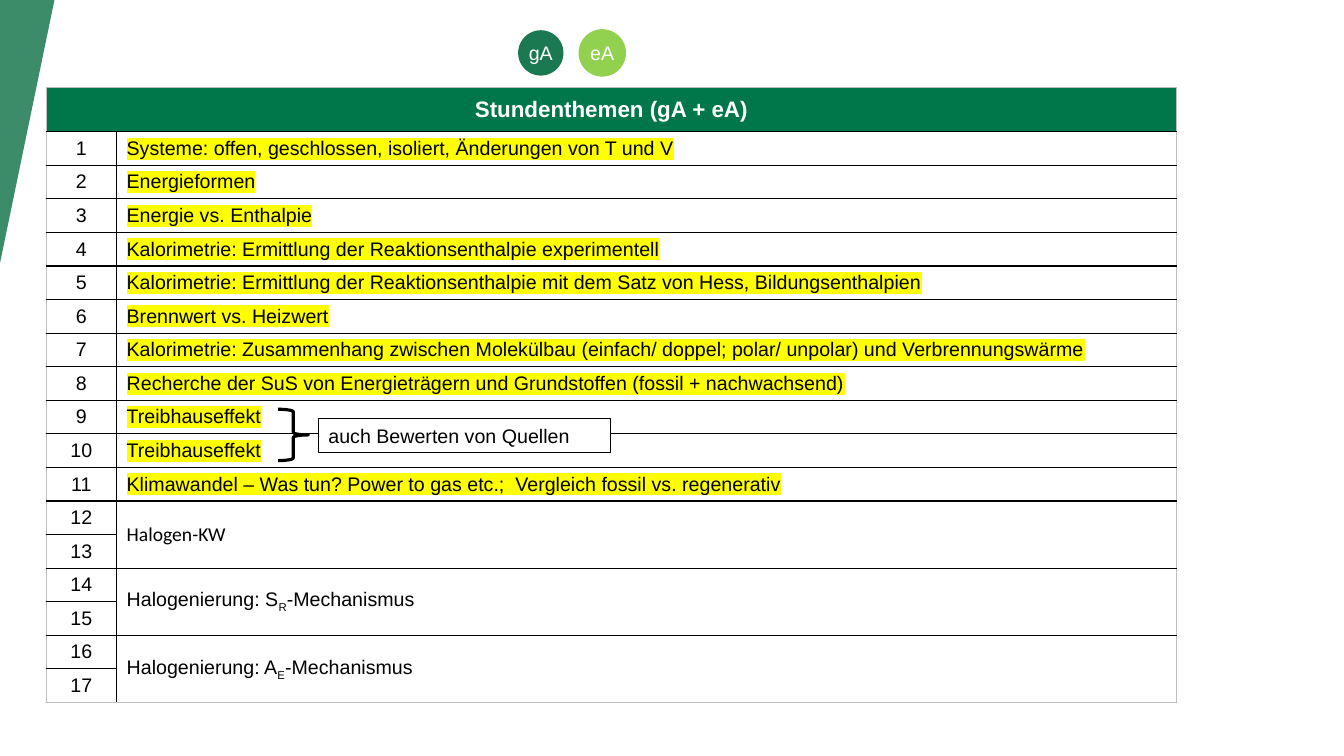
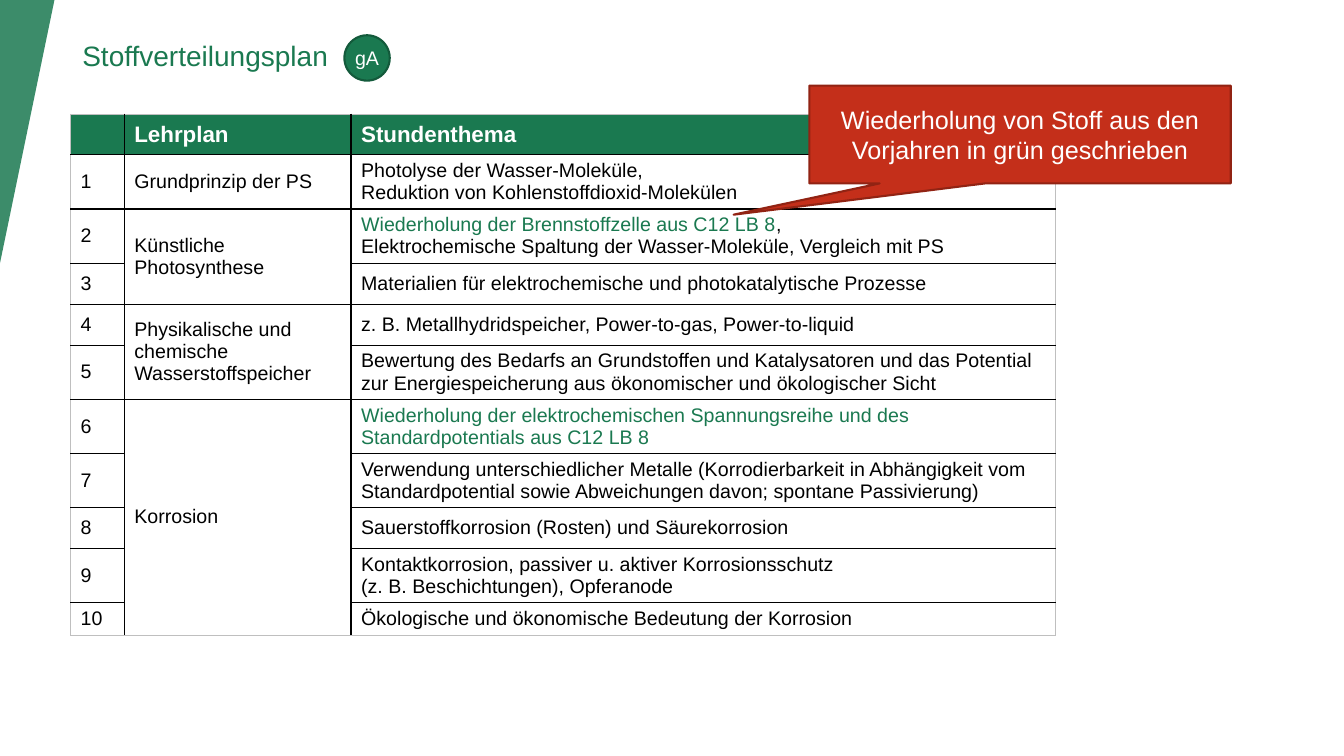
from lxml.etree import SubElement
from pptx import Presentation
from pptx.dml.color import RGBColor as RGB
from pptx.enum.shapes import MSO_SHAPE as SHAPE
from pptx.enum.text import MSO_ANCHOR as ANCHOR, PP_ALIGN as ALIGN
from pptx.oxml import parse_xml
from pptx.oxml.ns import nsdecls, qn
from pptx.util import Inches, Pt

GREEN = RGB(0x1A, 0x79, 0x50)
DEEP = RGB(0x00, 0x76, 0x4B)
DARK = RGB(0x13, 0x5A, 0x3B)
LIME = RGB(0x92, 0xD0, 0x50)
RED = RGB(0xC4, 0x2F, 0x1A)
MAROON = RGB(0x91, 0x23, 0x13)
BLACK = RGB(0, 0, 0)
WHITE = RGB(0xFF, 0xFF, 0xFF)
GREY = RGB(0xBF, 0xBF, 0xBF)
YELLOW = RGB(0xFF, 0xFF, 0x00)

UNIT = Inches(1) / 6  # the slide is a grid of 80 columns and 45 rows


def write(par, text, size=14, color=BLACK, bold=False, font="Arial", mark=None, base=0):
    """Add one run; mark is its highlight colour, base its baseline shift in percent."""
    run = par.add_run()
    run.text = text
    run.font.size, run.font.bold, run.font.name = Pt(size), bold, font
    run.font.color.rgb = color
    props = run._r.get_or_add_rPr()
    if base:
        props.set("baseline", str(base * 1000))
    if mark:
        props.find(qn("a:solidFill")).addnext(parse_xml(
            f'<a:highlight {nsdecls("a")}><a:srgbClr val="{mark}"/></a:highlight>'))


def draw(slide, kind, box, fill=None, line=None, width=1.5):
    """Add a preset shape; box is left, top, width, height in grid units."""
    shape = slide.shapes.add_shape(kind, *(round(v * UNIT) for v in box))
    shape.shadow.inherit = False
    if fill is None:
        shape.fill.background()
    else:
        shape.fill.solid()
        shape.fill.fore_color.rgb = fill
    if line is None:
        shape.line.fill.background()
    else:
        shape.line.color.rgb = line
        shape.line.width = Pt(width)
    return shape


prs = Presentation()
prs.slide_width, prs.slide_height = round(80 * UNIT), round(45 * UNIT)
first = prs.slides.add_slide(prs.slide_layouts[6])
second = prs.slides.add_slide(prs.slide_layouts[5])

# Corner wedge, shared through the master
wedge = draw(first, SHAPE.ISOSCELES_TRIANGLE, (0, 0, 3.24, 15.66), GREEN)
wedge.adjustments[0] = 1
wedge.rotation = 180
tint = wedge.element.spPr.find(qn("a:solidFill"))[0]
SubElement(tint, qn("a:alpha"), val="85000")
prs.slide_master.element.cSld.spTree.insert(2, wedge.element)

title = second.shapes.title
title.left, title.top, title.width, title.height = (
    round(v * UNIT) for v in (4.3, 1.95, 56.4, 2.7))
title.text_frame.vertical_anchor = ANCHOR.MIDDLE
head = title.text_frame.paragraphs[0]
head.alignment = ALIGN.LEFT
write(head, "Stoffverteilungsplan", 20, GREEN)

# Table contents: a cell is a string or a list of paragraphs, each a list of runs
topics = [
    "Systeme: offen, geschlossen, isoliert, Änderungen von T und V",
    "Energieformen",
    "Energie vs. Enthalpie",
    "Kalorimetrie: Ermittlung der Reaktionsenthalpie experimentell",
    "Kalorimetrie: Ermittlung der Reaktionsenthalpie mit dem Satz von Hess, Bildungsenthalpien",
    "Brennwert vs. Heizwert",
    "Kalorimetrie: Zusammenhang zwischen Molekülbau (einfach/ doppel; polar/ unpolar) "
    "und Verbrennungswärme",
    "Recherche der SuS von Energieträgern und Grundstoffen (fossil + nachwachsend)",
    "Treibhauseffekt",
    "Treibhauseffekt",
    "Klimawandel – Was tun? Power to gas etc.;  Vergleich fossil vs. regenerativ",
]
cells = [[[(topic, {"mark": YELLOW})]] for topic in topics]
cells += [[[("Halogen-KW", {"font": "Calibri"})]], ""]
for sign, sub in ("S", "R"), ("A", "E"):
    cells += [[[("Halogenierung: " + sign, {}), (sub, {"base": -25}),
                ("-Mechanismus", {})]], ""]
hours = [["Stundenthemen (gA + eA)", ""]]
hours += [[str(n), cell] for n, cell in enumerate(cells, 1)]

again = {"color": GREEN}
themes = [
    ("Grundprinzip der PS",
     "Photolyse der Wasser-Moleküle,\nReduktion von Kohlenstoffdioxid-Molekülen"),
    ("Künstliche Photosynthese",
     [[("Wiederholung der Brennstoffzelle aus C12 LB 8", again), (",", {})],
      [("Elektrochemische Spaltung der Wasser-Moleküle, Vergleich mit PS", {})]]),
    ("", "Materialien für elektrochemische und photokatalytische Prozesse"),
    ("Physikalische und chemische Wasserstoffspeicher",
     "z. B. Metallhydridspeicher, Power-to-gas, Power-to-liquid"),
    ("", "Bewertung des Bedarfs an Grundstoffen und Katalysatoren und das Potential "
         "zur Energiespeicherung aus ökonomischer und ökologischer Sicht"),
    ("Korrosion",
     [[("Wiederholung der elektrochemischen Spannungsreihe und des "
        "Standardpotentials aus C12 LB 8", again)]]),
    ("", "Verwendung unterschiedlicher Metalle (Korrodierbarkeit in Abhängigkeit vom "
         "Standardpotential sowie Abweichungen davon; spontane Passivierung)"),
    ("", "Sauerstoffkorrosion (Rosten) und Säurekorrosion"),
    ("", "Kontaktkorrosion, passiver u. aktiver Korrosionsschutz\n"
         "(z. B. Beschichtungen), Opferanode"),
    ("", "Ökologische und ökonomische Bedeutung der Korrosion"),
]
plan = [["", "Lehrplan", "Stundenthema"]]
plan += [[str(n), *pair] for n, pair in enumerate(themes, 1)]

ONE, TWO = 2.44, 3.22  # heights of rows with one and two lines
tables = [
    (first, 2.74, 5.2, [4.2, 63.1], [2.64] + [2] * 17, hours, DEEP, ALIGN.CENTER,
     [(0, 0, 0, 1), (12, 1, 13, 1), (14, 1, 15, 1), (16, 1, 17, 1)]),
    (second, 4.2, 6.78, [3.2, 13.5, 41.95],
     [ONE, TWO, TWO, ONE, ONE, TWO, TWO, TWO, ONE, TWO, 1.9], plan, GREEN, ALIGN.LEFT,
     [(2, 1, 3, 1), (4, 1, 5, 1), (6, 1, 10, 1)]),
]
for slide, left, top, cols, rows, data, band, align, spans in tables:
    box = (left, top, sum(cols), sum(rows))
    table = slide.shapes.add_table(
        len(rows), len(cols), *(round(v * UNIT) for v in box)).table
    table.horz_banding = False
    for col, width in zip(table.columns, cols):
        col.width = round(width * UNIT)
    for row, height in zip(table.rows, rows):
        row.height = round(height * UNIT)
    for r1, c1, r2, c2 in spans:
        table.cell(r1, c1).merge(table.cell(r2, c2))
    for r, line in enumerate(data):
        for c, text in enumerate(line):
            cell = table.cell(r, c)
            cell.vertical_anchor = ANCHOR.MIDDLE
            cell.fill.solid()
            cell.fill.fore_color.rgb = WHITE if r else band
            high, wide = ((cell.span_height, cell.span_width)
                          if cell.is_merge_origin else (1, 1))
            outer = {"lnL": c == 0, "lnR": c + wide == len(cols),
                     "lnT": r == 0, "lnB": r + high == len(rows)}
            for i, (side, rim) in enumerate(outer.items()):
                cell._tc.get_or_add_tcPr().insert(i, parse_xml(
                    f'<a:{side} {nsdecls("a")} w="{6350 if rim else 12700}"><a:solidFill>'
                    f'<a:srgbClr val="{GREY if rim else BLACK}"/></a:solidFill></a:{side}>'))
            if not text:
                continue
            if isinstance(text, str):
                text = [[(part, {})] for part in text.split("\n")]
            look = {} if r else {"size": 16, "color": WHITE, "bold": True}
            frame = cell.text_frame
            for i, runs in enumerate(text):
                par = frame.add_paragraph() if i else frame.paragraphs[0]
                par.alignment = align if c == 0 else ALIGN.LEFT
                for words, style in runs:
                    write(par, words, **{**look, **style})

# Remark on the two greenhouse lessons
draw(first, SHAPE.RIGHT_BRACE, (16.56, 24.36, 1.8, 3.06), None, BLACK, 2.25)
note = draw(first, SHAPE.RECTANGLE, (18.96, 24.9, 17.4, 2.04), WHITE, BLACK, 0.75)
note.text_frame.paragraphs[0].alignment = ALIGN.LEFT
write(note.text_frame.paragraphs[0], "auch Bewerten von Quellen")

call = draw(second, SHAPE.RECTANGULAR_CALLOUT, (48.18, 5.1, 25.08, 5.82), RED, MAROON)
call.adjustments[0], call.adjustments[1] = -0.68, 0.82
call.text_frame.word_wrap = True
call.text_frame.paragraphs[0].alignment = ALIGN.CENTER
write(call.text_frame.paragraphs[0],
      "Wiederholung von Stoff aus den Vorjahren in grün geschrieben", 18, WHITE)

# Course level badges
for slide, x, y, label, fill, edge in [
    (first, 34.5, 1.8, "eA", LIME, LIME),
    (first, 30.84, 1.8, "gA", GREEN, None),
    (second, 20.5, 2.1, "gA", GREEN, DARK),
]:
    badge = draw(slide, SHAPE.OVAL, (x, y, 2.7, 2.7), fill, edge)
    frame = badge.text_frame
    frame.word_wrap = False
    frame.margin_left = frame.margin_right = Inches(0.04)
    frame.paragraphs[0].alignment = ALIGN.CENTER
    write(frame.paragraphs[0], label, color=WHITE)

prs.save("out.pptx")
